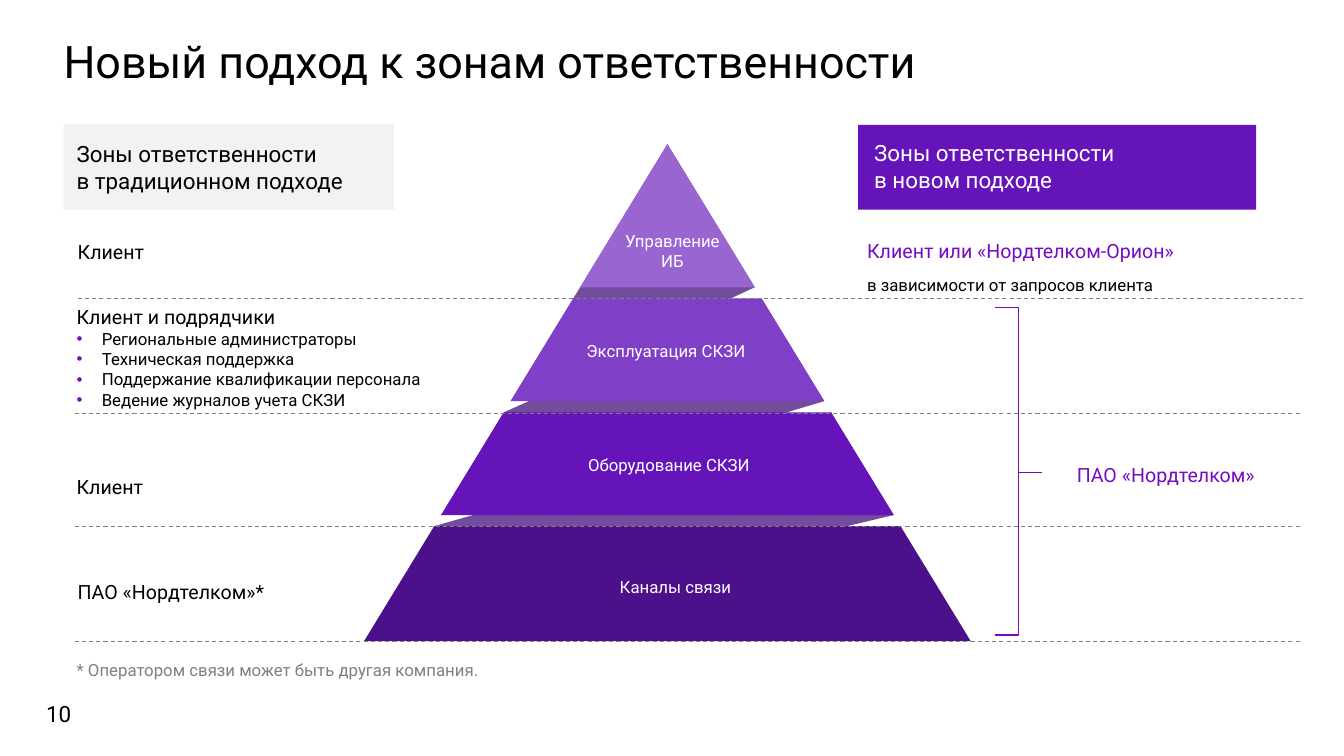
"""Build the slide on responsibility zones around a four-tier pyramid."""
from lxml.etree import SubElement
from pptx import Presentation
from pptx.dml.color import RGBColor
from pptx.enum.dml import MSO_LINE
from pptx.enum.shapes import MSO_CONNECTOR, MSO_SHAPE
from pptx.enum.text import MSO_ANCHOR, PP_ALIGN
from pptx.oxml.ns import qn
from pptx.util import Inches, Pt

FONT = "Roboto"
BLACK, WHITE, GREY = "000000", "FFFFFF", "808080"
PURPLE, VIOLET, SHADE = "6414B9", "750CBF", "734C9D"

APEX = (6.62, 1.43)
SLOPE = 0.61
TIERS = [
    (1.43, 2.85, "9965D1"),
    (2.96, 3.98, "7F3FC6"),
    (4.09, 5.11, PURPLE),
    (5.22, 6.36, "4C118A"),
]
LABELS = [
    ("Управление ИБ", (6.04, 2.24, 1.26, 0.5)),
    ("Эксплуатация СКЗИ", (5.64, 3.09, 1.93, 0.78)),
    ("Оборудование СКЗИ", (4.86, 4.22, 3.55, 0.79)),
    ("Каналы связи", (4.23, 5.43, 4.94, 0.79)),
]
PANELS = [((0.63, 1.23, 3.28, 0.85), "F2F2F2"), ((8.51, 1.24, 3.95, 0.84), PURPLE)]
RULES = [(0.77, 2.96), (0.74, 4.1), (0.74, 5.22), (0.74, 6.36)]
RULE_LEN = 12.16
BRACE = (9.87, 3.05, 0.46, 3.25)

TITLE = "Новый подход к зонам ответственности"
HEADS = [
    (["Зоны ответственности", "в традиционном подходе"], (0.76, 1.24, 3.47, 0.75), BLACK, MSO_ANCHOR.MIDDLE),
    (["Зоны ответственности", "в новом подходе"], (8.67, 1.25, 3.9, 0.66), WHITE, MSO_ANCHOR.TOP),
]
NOTES = [
    ("Клиент", (0.77, 2.18, 3.15, 0.45), 14, BLACK, 1.3),
    ("Клиент", (0.76, 4.58, 4.29, 0.45), 14, BLACK, 1),
    ("ПАО «Нордтелком»*", (0.77, 5.55, 2.49, 0.45), 14, BLACK, 1.3),
    ("Клиент или «Нордтелком-Орион»", (8.6, 2.17, 3.37, 0.45), 14, VIOLET, 1.3),
    ("в зависимости от запросов клиента", (8.6, 2.54, 2.95, 0.42), 12, BLACK, 1.3),
    ("ПАО «Нордтелком»", (10.68, 4.39, 2.34, 0.5), 14, VIOLET, 1.3),
    ("* Оператором связи может быть другая компания.", (0.76, 6.36, 4.15, 0.42), 12, GREY, 1.3),
]
DUTIES = [
    "Региональные администраторы",
    "Техническая поддержка",
    "Поддержание квалификации персонала",
    "Ведение журналов учета СКЗИ",
]
DUTY_HEAD = "Клиент и подрядчики"
DUTY_BOX = (0.76, 2.96, 4.29, 1.44)
PAD = (0, 0.13, 0.1, 0.05)


def tint(text):
    return RGBColor.from_string(text)


def paint(shape, color):
    shape.shadow.inherit = False
    shape.fill.solid()
    shape.fill.fore_color.rgb = tint(color)
    shape.line.fill.background()


def frame(box, pad, anchor=MSO_ANCHOR.TOP):
    text = slide.shapes.add_textbox(*map(Inches, box)).text_frame
    text.word_wrap = True
    text.vertical_anchor = anchor
    text.margin_left, text.margin_top, text.margin_right, text.margin_bottom = map(Inches, pad)
    return text


def write(para, lines, size, color, space=1):
    para.line_spacing = space
    for i, line in enumerate(lines):
        if i:
            para.add_line_break()
        run = para.add_run()
        run.text = line
        run.font.name = FONT
        run.font.size = Pt(size)
        run.font.color.rgb = tint(color)


def bullet(para):
    props = para._p.get_or_add_pPr()
    props.set("marL", str(Inches(0.25)))
    props.set("indent", str(-Inches(0.25)))
    SubElement(SubElement(props, qn("a:buClr")), qn("a:srgbClr")).set("val", VIOLET)
    SubElement(props, qn("a:buFont")).set("typeface", "Arial")
    SubElement(props, qn("a:buChar")).set("char", "•")


def poly(points, color):
    start, *rest = [(Inches(x), Inches(y)) for x, y in points]
    form = slide.shapes.build_freeform(*start)
    form.add_line_segments(rest, close=True)
    paint(form.convert_to_shape(), color)


def edge(y, side):
    return APEX[0] + side * SLOPE * (y - APEX[1]), y


def pyramid():
    for (top, base, _), (low, foot, _) in zip(TIERS, TIERS[1:]):
        poly([edge(top, 1), edge(low, -1), edge(foot, -1), edge(base, 1)], SHADE)
    for top, base, color in TIERS:
        points = [edge(top, -1), edge(base, -1), edge(base, 1)]
        if top > APEX[1]:
            points.append(edge(top, 1))
        poly(points, color)
    for label, box in LABELS:
        text = frame(box, [0.07] * 4, MSO_ANCHOR.MIDDLE)
        para = text.paragraphs[0]
        para.alignment = PP_ALIGN.CENTER
        write(para, [label], 12, WHITE)


def rules():
    for x, y in RULES:
        ends = map(Inches, (x, y, x + RULE_LEN, y))
        line = slide.shapes.add_connector(MSO_CONNECTOR.STRAIGHT, *ends)
        line.line.color.rgb = tint(GREY)
        line.line.width = Pt(0.75)
        line.line.dash_style = MSO_LINE.DASH
        SubElement(line._element.spPr, qn("a:effectLst"))


def brace():
    shape = slide.shapes.add_shape(MSO_SHAPE.RIGHT_BRACE, *map(Inches, BRACE))
    shape.shadow.inherit = False
    shape.adjustments[0] = 0
    shape.adjustments[1] = 0.503
    shape.fill.background()
    shape.line.color.rgb = tint(VIOLET)
    shape.line.width = Pt(1)


def texts():
    title = frame((0.63, 0.35, 11.99, 0.6), (0, 0.05, 0.1, 0.05))
    write(title.paragraphs[0], [TITLE], 32, BLACK, 0.9)
    for lines, box, color, anchor in HEADS:
        write(frame(box, PAD, anchor).paragraphs[0], lines, 16, color)
    for line, box, size, color, space in NOTES:
        write(frame(box, PAD).paragraphs[0], [line], size, color, space)
    text = frame(DUTY_BOX, [0] * 4)
    write(text.paragraphs[0], [DUTY_HEAD], 14, BLACK, 1.3)
    for duty in DUTIES:
        para = text.add_paragraph()
        bullet(para)
        write(para, [duty], 12, BLACK)
    number = frame((0.36, 6.9, 0.5, 0.37), (0.1, 0.05, 0.1, 0.05))
    number.word_wrap = False
    write(number.paragraphs[0], ["10"], 16, BLACK)


deck = Presentation()
deck.slide_width, deck.slide_height = Inches(13.33), Inches(7.5)
slide = deck.slides.add_slide(deck.slide_layouts[6])
for box, color in PANELS:
    paint(slide.shapes.add_shape(MSO_SHAPE.RECTANGLE, *map(Inches, box)), color)
pyramid()
rules()
texts()
brace()
deck.save("out.pptx")
